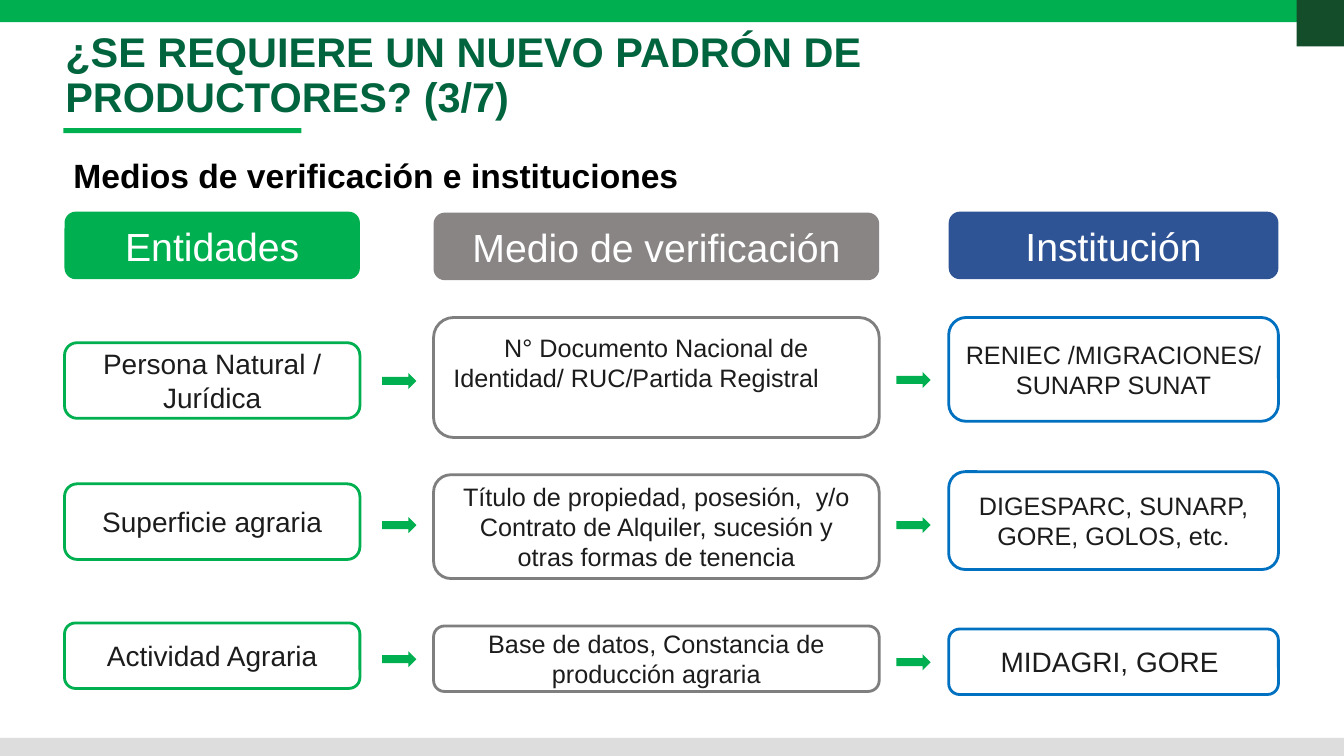
from pptx import Presentation
from pptx import util as u
from pptx.dml import color
from pptx.enum import shapes, text

COLORS = {
    "green": "00B050", "dark_green": "134D2A", "title_green": "00643E",
    "gray": "898585", "border_gray": "7F7F7F", "footer": "DDDDDD",
    "navy": "2F5496", "blue": "0070C0",
    "ink": "1C1C1C", "white": "FFFFFF", "black": "000000",
}
KINDS = shapes.MSO_SHAPE


def add_block(kind, left, top, width, height, fill, line=None):
    shape = slide.shapes.add_shape(
        kind, u.Inches(left), u.Inches(top), u.Inches(width), u.Inches(height))
    shape.shadow.inherit = False
    shape.fill.solid()
    shape.fill.fore_color.rgb = color.RGBColor.from_string(COLORS[fill])
    if line:
        shape.line.color.rgb = color.RGBColor.from_string(COLORS[line])
        shape.line.width = u.Pt(2)
    else:
        shape.line.fill.background()
    return shape


def add_text(shape, words, size, ink, align=text.PP_ALIGN.CENTER, bold=False):
    shape.text_frame.word_wrap = True
    paragraph = shape.text_frame.paragraphs[0]
    paragraph.alignment = align
    run = paragraph.add_run()
    run.text = words
    run.font.name = "Arial"
    run.font.size = u.Pt(size)
    run.font.bold = bold
    run.font.color.rgb = color.RGBColor.from_string(COLORS[ink])
    return paragraph


presentation = Presentation()
presentation.slide_width = u.Inches(13.33)
presentation.slide_height = u.Inches(7.5)
slide = presentation.slides.add_slide(presentation.slide_layouts[6])

# Page bands, corner and title underline
for left, top, width, height, fill in [
    (0, 0, 13.33, 0.22, "green"),
    (0, 7.32, 13.33, 0.18, "footer"),
    (12.86, 0, 0.47, 0.46, "dark_green"),
    (0.63, 1.27, 2.36, 0.05, "green"),
]:
    add_block(KINDS.RECTANGLE, left, top, width, height, fill)

# Title and subtitle
for left, top, width, height, words, size, ink, spacing in [
    (0.55, 0.27, 9.28, 1, "¿SE REQUIERE UN NUEVO PADRÓN DE PRODUCTORES? (3/7)",
     29.6, "title_green", 0.9),
    (0.63, 1.49, 7.94, 0.5, "Medios de verificación e instituciones",
     24, "black", 1),
]:
    box = slide.shapes.add_textbox(
        u.Inches(left), u.Inches(top), u.Inches(width), u.Inches(height))
    paragraph = add_text(box, words, size, ink, text.PP_ALIGN.LEFT, bold=True)
    paragraph.line_spacing = spacing

# Columns: heading, left, width, heading top, fill, border, boxes
# Each box: top, height, text size, words
columns = [
    ("Entidades", 0.64, 2.93, 2.1, "green", "green", [
        (3.4, 0.75, 20, "Persona Natural / Jurídica"),
        (4.8, 0.75, 20, "Superficie agraria"),
        (6.18, 0.65, 20, "Actividad Agraria"),
    ]),
    ("Medio de verificación", 4.3, 4.42, 2.11, "gray", "border_gray", [
        (3.15, 1.19, 18,
         "N° Documento Nacional de Identidad/ RUC/Partida Registral"),
        (4.71, 1.03, 18, "Título de propiedad, posesión,  y/o Contrato de "
                         "Alquiler, sucesión y otras formas de tenencia"),
        (6.21, 0.65, 18, "Base de datos, Constancia de producción agraria"),
    ]),
    ("Institución", 9.41, 3.27, 2.1, "navy", "blue", [
        (3.15, 1.03, 18, "RENIEC /MIGRACIONES/ SUNARP SUNAT"),
        (4.68, 0.97, 18, "DIGESPARC, SUNARP, GORE, GOLOS, etc."),
        (6.24, 0.65, 20, "MIDAGRI, GORE "),
    ]),
]
for heading, left, width, heading_top, fill, border, boxes in columns:
    header = add_block(
        KINDS.ROUNDED_RECTANGLE, left, heading_top, width, 0.67, fill)
    add_text(header, heading, 28, "white")
    for top, height, size, words in boxes:
        box = add_block(
            KINDS.ROUNDED_RECTANGLE, left, top, width, height, "white", border)
        paragraph = add_text(box, words, size, "ink")
        if words.startswith("N°"):
            # Text sits high, with its second line shifted to the left
            box.text_frame.margin_bottom = u.Inches(0.35)
            box.text_frame.margin_right = u.Inches(0.5)
            properties = paragraph._p.get_or_add_pPr()
            properties.set("marL", "0")
            properties.set("indent", str(u.Inches(0.4)))

# Arrows between columns
for left, tops in [(3.79, (3.7, 5.13, 6.46)), (8.89, (3.69, 5.13, 6.49))]:
    for top in tops:
        add_block(KINDS.RIGHT_ARROW, left, top, 0.34, 0.16, "green")

presentation.save("out.pptx")
